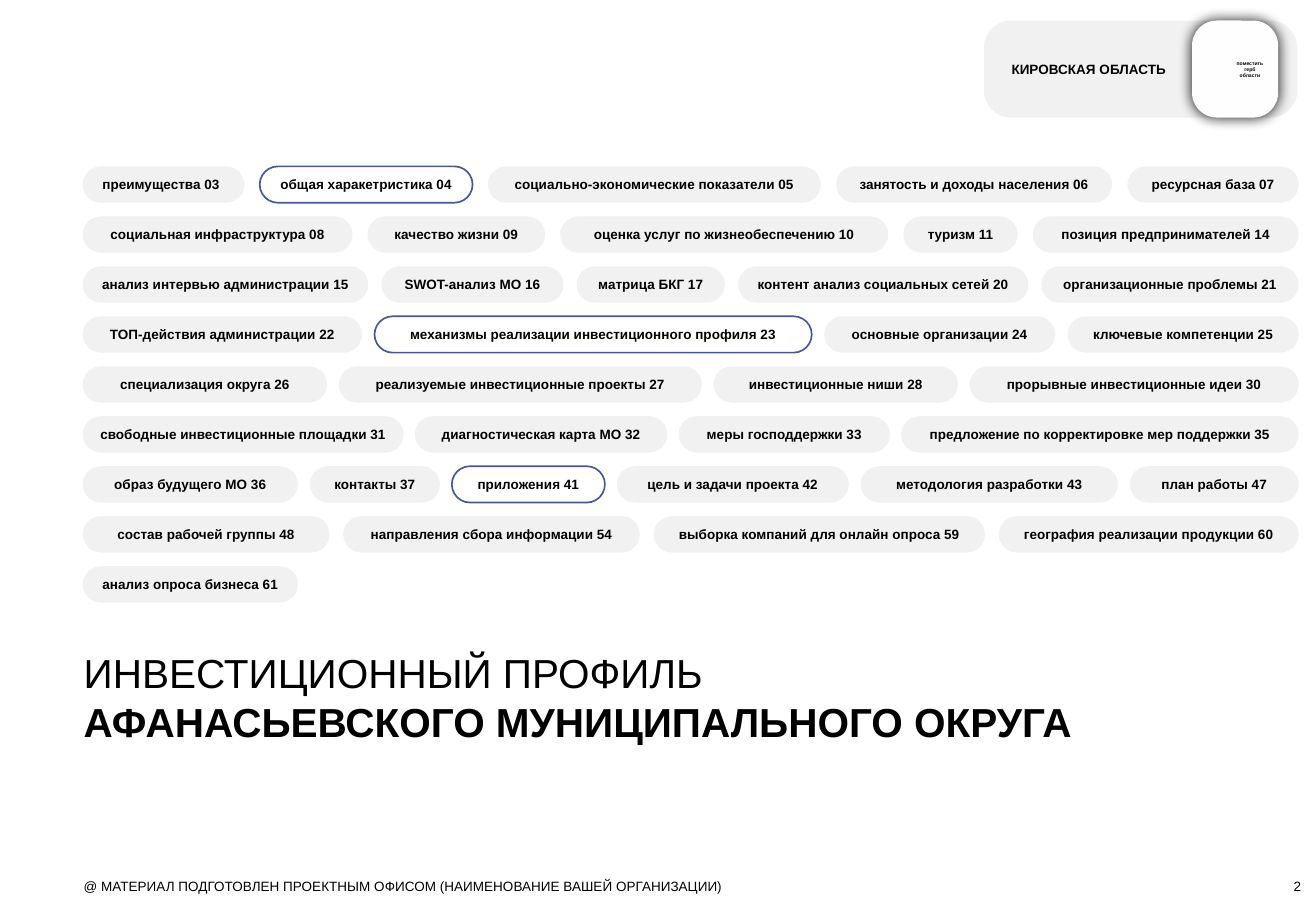
from lxml import etree
from pptx import Presentation
from pptx import util as u
from pptx.dml.color import RGBColor
from pptx.enum import shapes, text
from pptx.oxml import ns

COLOURS = {"ink": "000000", "pill": "F1F1F1", "outline": "4756A0", "emblem": "FEFEFE"}
LEFT, RIGHT = 1.73, 27.15
FIRST_ROW, ROW_STEP, PILL_HEIGHT = 3.48, 1.045, 0.76
MARKED = ("общая харакетристика 04", "механизмы реализации инвестиционного профиля 23",
          "приложения 41")
ROWS = [
    [(3.38, "преимущества 03"), (4.45, "общая харакетристика 04"),
     (6.96, "социально-экономические показатели 05"),
     (5.77, "занятость и доходы населения 06"), (3.58, "ресурсная база 07")],
    [(5.64, "социальная инфраструктура 08"), (3.71, "качество жизни 09"),
     (6.86, "оценка услуг по жизнеобеспечению 10"), (2.39, "туризм 11"),
     (5.56, "позиция предпринимателей 14")],
    [(5.97, "анализ интервью администрации 15"), (3.81, "SWOT-анализ МО 16"),
     (3.1, "матрица БКГ 17"), (6.07, "контент анализ социальных сетей 20"),
     (5.38, "организационные проблемы 21")],
    [(5.84, "ТОП-действия администрации 22"),
     (9.14, "механизмы реализации инвестиционного профиля 23"),
     (4.83, "основные организации 24"), (4.83, "ключевые компетенции 25")],
    [(5.11, "специализация округа 26"), (7.59, "реализуемые инвестиционные проекты 27"),
     (5.11, "инвестиционные ниши 28"), (6.88, "прорывные инвестиционные идеи 30")],
    [(6.71, "свободные инвестиционные площадки 31"), (5.28, "диагностическая карта МО 32"),
     (4.42, "меры господдержки 33"), (8.31, "предложение по корректировке мер поддержки 35")],
    [(4.5, "образ будущего МО 36"), (2.72, "контакты 37"), (3.2, "приложения 41"),
     (4.85, "цель и задачи проекта 42"), (5.38, "методология разработки 43"),
     (3.53, "план работы 47")],
    [(5.16, "состав рабочей группы 48"), (6.2, "направления сбора информации 54"),
     (6.93, "выборка компаний для онлайн опроса 59"), (6.27, "география реализации продукции 60")],
    [(4.5, "анализ опроса бизнеса 61")],
]


class Painter:
    """Draws the elements of the current page in one style."""

    def __init__(self, deck, font="Arial"):
        self.font = font
        self.page = deck.slides.add_slide(deck.slide_layouts[5])

    def add_text(self, box, spans, size=8, align="LEFT", anchor="TOP", insets=(0, 0, 0, 0)):
        frame = box.text_frame
        frame.word_wrap = True
        frame.auto_size = text.MSO_AUTO_SIZE.NONE
        frame.vertical_anchor = text.MSO_ANCHOR[anchor]
        (frame.margin_left, frame.margin_top,
         frame.margin_right, frame.margin_bottom) = map(u.Cm, insets)
        para = frame.paragraphs[0]
        para.alignment = text.PP_ALIGN[align]
        para.line_spacing = 1.0
        for words, bold in spans:
            span = para.add_run()
            span.text = words
            span.font.name, span.font.size, span.font.bold = self.font, u.Pt(size), bold
            span.font.color.rgb = RGBColor.from_string(COLOURS["ink"])

    def title(self, area, spans, size):
        box = self.page.shapes.title
        box.left, box.top, box.width, box.height = map(u.Cm, area)
        self.add_text(box, spans, size)

    def label(self, area, words, bold=False, **style):
        box = self.page.shapes.add_textbox(*map(u.Cm, area))
        self.add_text(box, [(words, bold)], **style)

    def rounded(self, area, radius, fill=None):
        kind = shapes.MSO_SHAPE.ROUNDED_RECTANGLE
        box = self.page.shapes.add_shape(kind, *map(u.Cm, area))
        box.adjustments[0] = radius
        box.shadow.inherit = False
        if fill:
            box.fill.solid()
            box.fill.fore_color.rgb = RGBColor.from_string(COLOURS[fill])
            box.line.fill.background()
        else:
            box.fill.background()
            box.line.color.rgb = RGBColor.from_string(COLOURS["outline"])
            box.line.width = u.Pt(1)
        return box

    def pill(self, area, words, **style):
        box = self.rounded(area, 0.5, None if words in MARKED else "pill")
        self.add_text(box, [(words, True)], anchor="MIDDLE", **style)

    def glow(self, box, blur, opacity):
        effects = box.element.spPr.find(ns.qn("a:effectLst"))
        shadow = etree.SubElement(effects, ns.qn("a:outerShdw"), blurRad=str(u.Pt(blur)))
        colour = etree.SubElement(shadow, ns.qn("a:srgbClr"), val=COLOURS["ink"])
        etree.SubElement(colour, ns.qn("a:alpha"), val=str(opacity * 1000))


def draw_menu(painter):
    """Spreads the pills of each row evenly between the margins."""
    for index, row in enumerate(ROWS):
        free = RIGHT - LEFT - sum(width for width, _ in row)
        gap = free / max(len(row) - 1, 1)
        left, top = LEFT, FIRST_ROW + index * ROW_STEP
        for width, words in row:
            first = words == ROWS[0][0][1]
            style = {"insets": (0.3, 0, 0, 0)} if first else {"align": "CENTER"}
            painter.pill((left, top, width, PILL_HEIGHT), words, **style)
            left += width + gap


def main():
    """Builds the contents page."""
    deck = Presentation()
    deck.slide_width, deck.slide_height = u.Cm(27.51), u.Cm(19.05)
    painter = Painter(deck)
    painter.title((1.75, 13.56, 21.46, 2.06),
                  [("ИНВЕСТИЦИОННЫЙ ПРОФИЛЬ ", False),
                   ("АФАНАСЬЕВСКОГО МУНИЦИПАЛЬНОГО ОКРУГА", True)], 24)
    draw_menu(painter)
    painter.label((1.75, 18.36, 20.32, 0.33),
                  "@ МАТЕРИАЛ ПОДГОТОВЛЕН ПРОЕКТНЫМ ОФИСОМ (НАИМЕНОВАНИЕ ВАШЕЙ ОРГАНИЗАЦИИ)")
    painter.label((25.17, 18.36, 2.03, 0.33), "2", align="RIGHT", anchor="BOTTOM")
    region = painter.rounded((20.57, 0.43, 6.55, 2.03), 0.28, "pill")
    painter.add_text(region, [("КИРОВСКАЯ ОБЛАСТЬ", True)], anchor="MIDDLE",
                     insets=(0.41, 0.13, 2.01, 0.13))
    emblem = painter.rounded((24.92, 0.43, 1.8, 2.03), 0.29, "emblem")
    painter.glow(emblem, 8.4, 92)
    painter.label((25.81, 1.27, 0.64, 0.38), "поместить герб области", True,
                  size=3, align="CENTER")
    deck.save("out.pptx")


if __name__ == "__main__":
    main()
